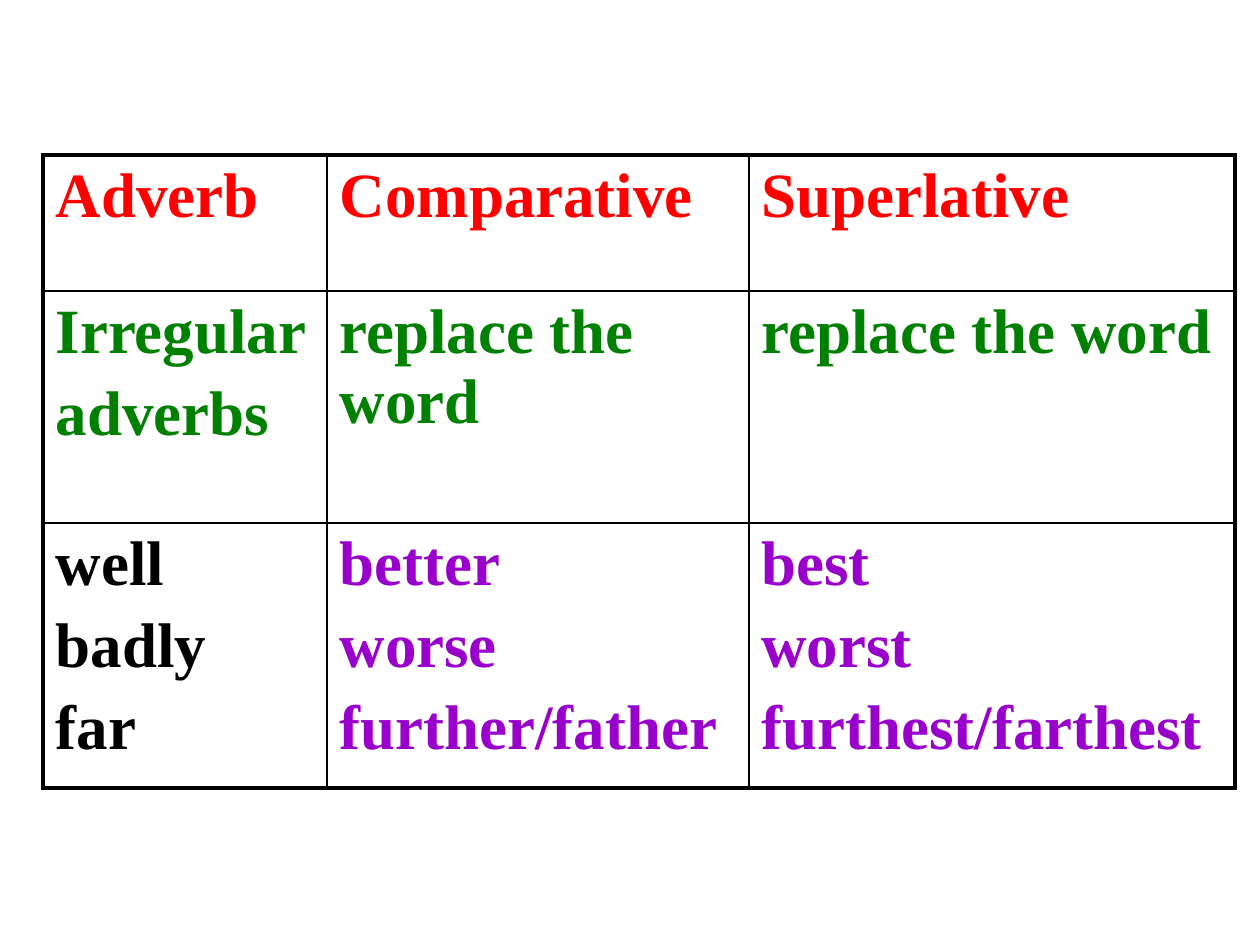
import pptx
import pptx.util
import pptx.dml.color
import pptx.oxml
import pptx.oxml.ns

PX = 914400 // 126
RED = pptx.dml.color.RGBColor(0xFF, 0x00, 0x00)
GREEN = pptx.dml.color.RGBColor(0x00, 0x80, 0x00)
BLACK = pptx.dml.color.RGBColor(0x00, 0x00, 0x00)
PURPLE = pptx.dml.color.RGBColor(0x99, 0x00, 0xCC)

FONT = {"name": "Times New Roman", "size": pptx.util.Pt(36), "bold": True}
THICK, THIN = pptx.util.Pt(2.25), pptx.util.Pt(1)
COLS = [284, 422, 486]
ROWS = [136, 232, 265]
CELLS = [
    [("Adverb", RED), ("Comparative", RED), ("Superlative", RED)],
    [("Irregular\nadverbs", GREEN), ("replace the word", GREEN), ("replace the word", GREEN)],
    [
        ("well\nbadly\nfar", BLACK),
        ("better\nworse\nfurther/father", PURPLE),
        ("best\nworst\nfurthest/farthest", PURPLE),
    ],
]


def add_borders(cell, edges):
    tcPr = cell._tc.get_or_add_tcPr()
    for i, (side, outer) in enumerate(edges.items()):
        width = THICK if outer else THIN
        ln = pptx.oxml.parse_xml(
            f'<a:ln{side} {pptx.oxml.ns.nsdecls("a")} w="{width}">'
            f'<a:solidFill><a:srgbClr val="{BLACK}"/></a:solidFill></a:ln{side}>'
        )
        tcPr.insert(i, ln)


prs = pptx.Presentation()
prs.slide_width = pptx.util.Inches(10)
prs.slide_height = pptx.util.Inches(7.5)
slide = prs.slides.add_slide(prs.slide_layouts[6])

sp = slide.shapes.add_table(
    len(ROWS), len(COLS), 43 * PX, 155 * PX, sum(COLS) * PX, sum(ROWS) * PX
)
table = sp.table
for name in ("first_row", "horz_banding"):
    setattr(table, name, False)
for col, width in zip(table.columns, COLS):
    col.width = width * PX
for row, height in zip(table.rows, ROWS):
    row.height = height * PX

for y, line in enumerate(CELLS):
    for x, (text, color) in enumerate(line):
        cell = table.cell(y, x)
        cell.fill.background()
        add_borders(cell, {
            "L": x == 0,
            "R": x == len(COLS) - 1,
            "T": y == 0,
            "B": y == len(ROWS) - 1,
        })
        tf = cell.text_frame
        tf.text = text
        for i, p in enumerate(tf.paragraphs):
            p.space_before = pptx.util.Pt(7 if i else 0)
            r = p.runs[0]
            for key, value in FONT.items():
                setattr(r.font, key, value)
            r.font.color.rgb = color

prs.save("out.pptx")
